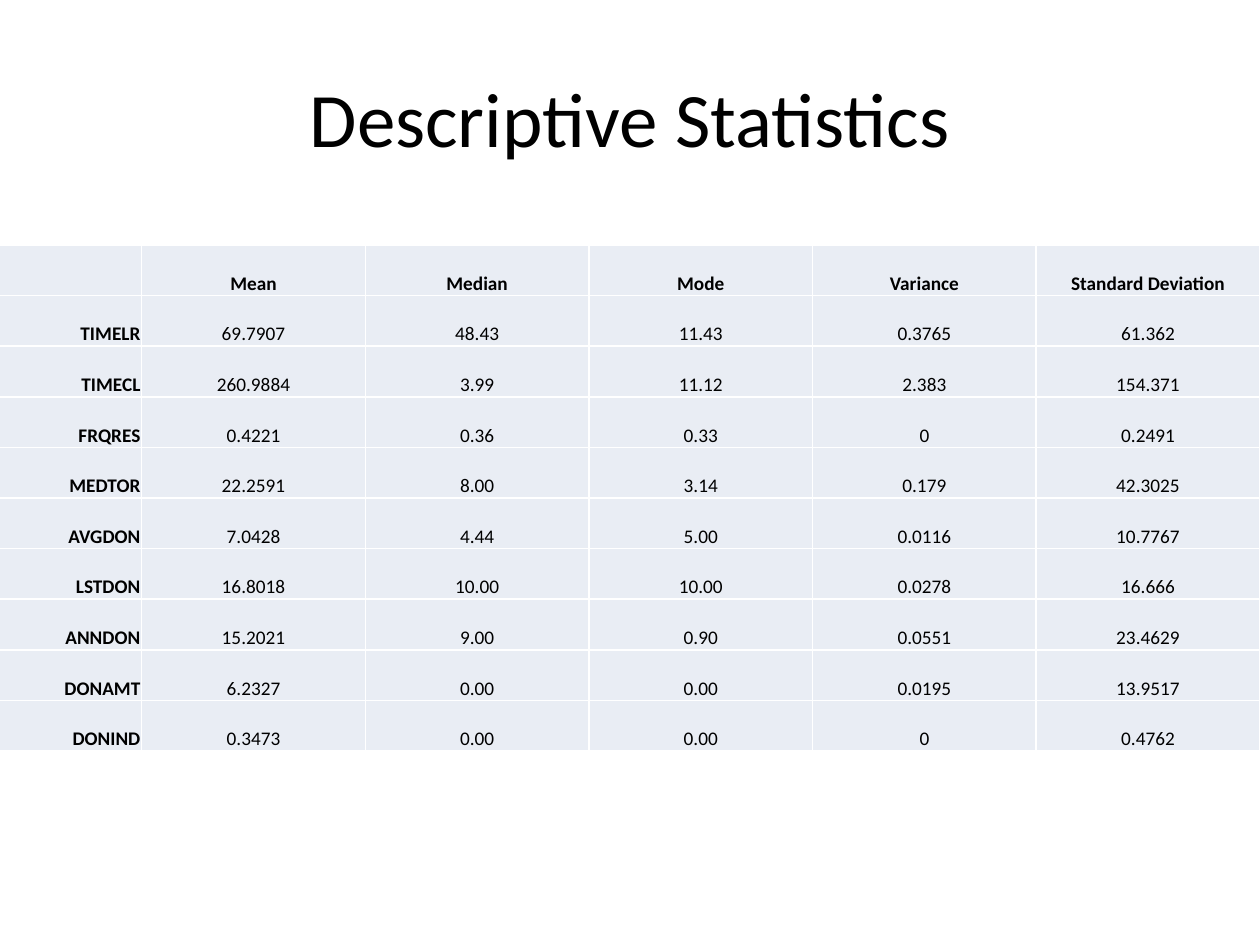
from lxml.etree import SubElement
from pptx import Presentation
from pptx.dml.color import RGBColor
from pptx.enum.text import MSO_ANCHOR as Anchor, PP_ALIGN as Align
from pptx.oxml.ns import qn
from pptx.util import Pt

TITLE = "Descriptive Statistics"
ROWS = [
    ("", "Mean", "Median", "Mode", "Variance", "Standard Deviation"),
    ("TIMELR", "69.7907", "48.43", "11.43", "0.3765", "61.362"),
    ("TIMECL", "260.9884", "3.99", "11.12", "2.383", "154.371"),
    ("FRQRES", "0.4221", "0.36", "0.33", "0", "0.2491"),
    ("MEDTOR", "22.2591", "8.00", "3.14", "0.179", "42.3025"),
    ("AVGDON", "7.0428", "4.44", "5.00", "0.0116", "10.7767"),
    ("LSTDON", "16.8018", "10.00", "10.00", "0.0278", "16.666"),
    ("ANNDON", "15.2021", "9.00", "0.90", "0.0551", "23.4629"),
    ("DONAMT", "6.2327", "0.00", "0.00", "0.0195", "13.9517"),
    ("DONIND", "0.3473", "0.00", "0.00", "0", "0.4762"),
]

FONT = "Calibri"
BLACK, WHITE, PALE_BLUE = "000000", "FFFFFF", "E9EDF4"
SLIDE_WIDTH, SLIDE_HEIGHT = 720, 540
TABLE_TOP, COLUMN_WIDTH, ROW_HEIGHT = 140, 127.8, 28.94
TABLE_WIDTH = COLUMN_WIDTH * len(ROWS[0])
TABLE_LEFT = SLIDE_WIDTH - TABLE_WIDTH  # right edges of table and slide meet


def color(value):
    return RGBColor.from_string(value)


def write(frame, text, size=11, bold=False, align=Align.CENTER):
    para = frame.paragraphs[0]
    para.alignment = align
    span = para.add_run()
    span.text = text
    span.font.name = FONT
    span.font.size = Pt(size)
    span.font.bold = bold
    span.font.color.rgb = color(BLACK)


def add_borders(cell, value, width):
    properties = cell._tc.get_or_add_tcPr()
    for side in ("a:lnL", "a:lnR", "a:lnT", "a:lnB"):
        line = SubElement(properties, qn(side), w=str(Pt(width)))
        fill = SubElement(line, qn("a:solidFill"))
        SubElement(fill, qn("a:srgbClr"), val=value)


def add_title(page):
    box = page.shapes.add_textbox(Pt(36), Pt(21.6), Pt(648), Pt(90))
    box.text_frame.word_wrap = True
    box.text_frame.vertical_anchor = Anchor.MIDDLE
    write(box.text_frame, TITLE, size=44)


def add_statistics(page):
    table = page.shapes.add_table(
        len(ROWS), len(ROWS[0]), Pt(TABLE_LEFT), Pt(TABLE_TOP),
        Pt(TABLE_WIDTH), Pt(ROW_HEIGHT * len(ROWS))).table
    for column in table.columns:
        column.width = Pt(COLUMN_WIDTH)
    for r, values in enumerate(ROWS):
        table.rows[r].height = Pt(ROW_HEIGHT)
        for c, value in enumerate(values):
            cell = table.cell(r, c)
            cell.margin_left = cell.margin_right = cell.margin_top = Pt(0.72)
            cell.margin_bottom = Pt(0)
            cell.vertical_anchor = Anchor.BOTTOM
            add_borders(cell, WHITE, 1)
            cell.fill.solid()
            cell.fill.fore_color.rgb = color(PALE_BLUE)
            if value:
                write(cell.text_frame, value, bold=r == 0 or c == 0,
                      align=Align.RIGHT if c == 0 else Align.CENTER)


def main():
    deck = Presentation()
    deck.slide_width, deck.slide_height = Pt(SLIDE_WIDTH), Pt(SLIDE_HEIGHT)
    page = deck.slides.add_slide(deck.slide_layouts[6])
    add_title(page)
    add_statistics(page)
    deck.save("out.pptx")


if __name__ == "__main__":
    main()
